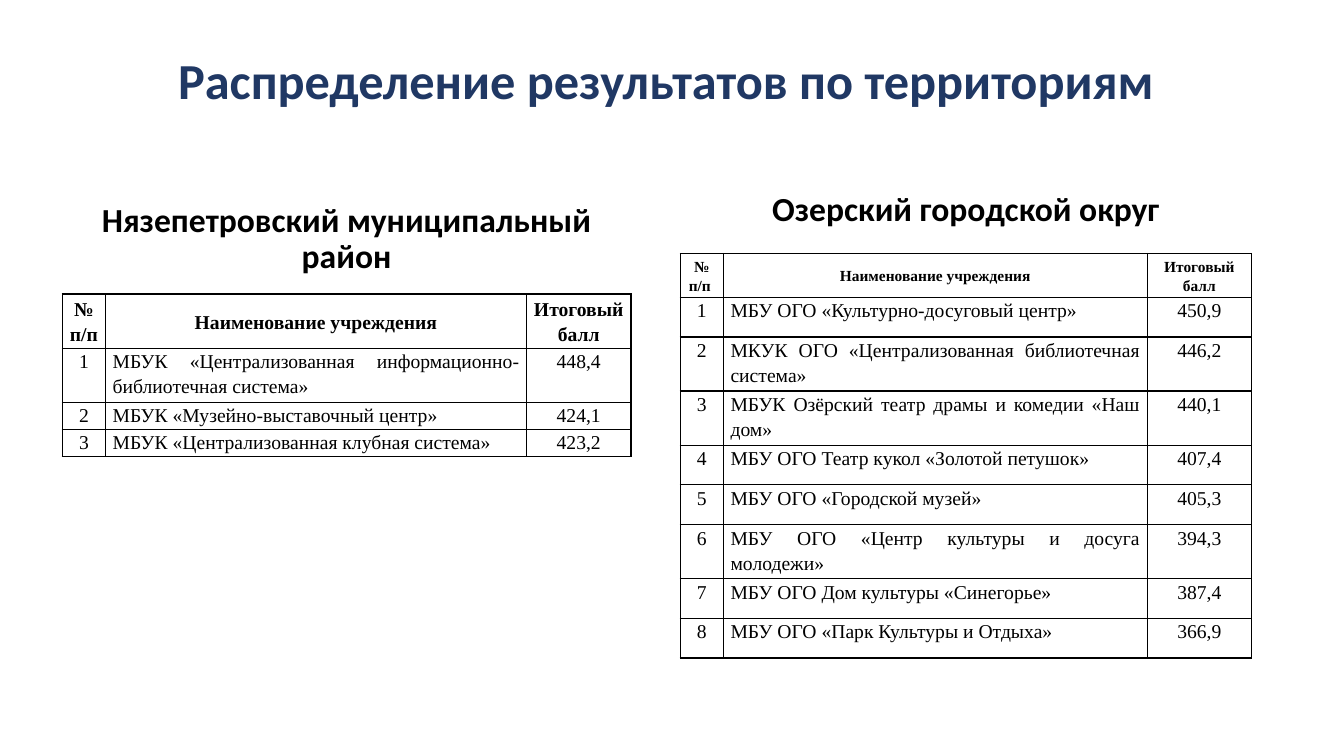
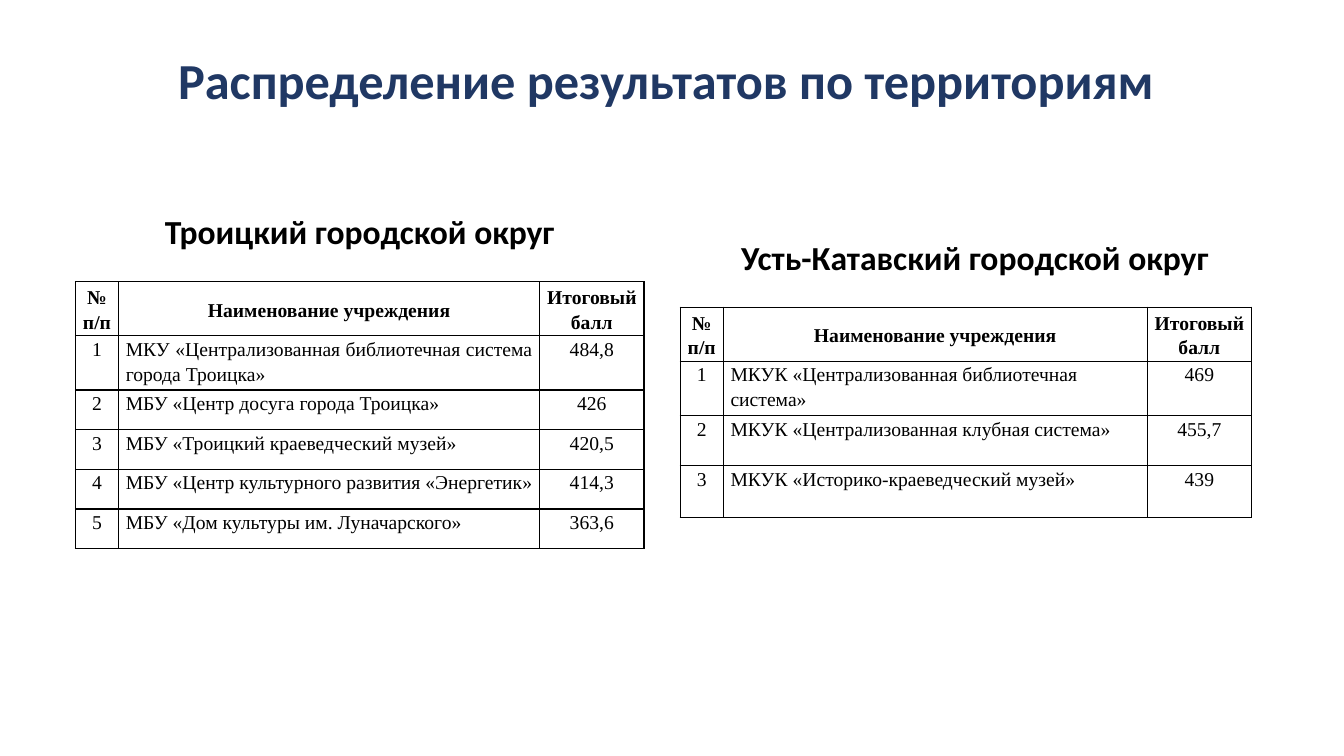
from dataclasses import dataclass

from lxml import etree
from pptx import Presentation
from pptx.dml.color import RGBColor
from pptx.enum.text import MSO_ANCHOR, PP_ALIGN
from pptx.oxml.ns import qn
from pptx.slide import Slide
from pptx.table import _Cell
from pptx.text.text import _Paragraph
from pptx.util import Cm, Pt

CENTER, LEFT, JUST = PP_ALIGN.CENTER, PP_ALIGN.LEFT, PP_ALIGN.JUSTIFY
TOP, MIDDLE, BOTTOM = MSO_ANCHOR.TOP, MSO_ANCHOR.MIDDLE, MSO_ANCHOR.BOTTOM


@dataclass(frozen=True)
class Theme:
    navy: str = "203864"
    black: str = "000000"
    sans: str = "Calibri"
    serif: str = "Times New Roman"
    title: int = 36
    head: int = 24
    body: int = 14
    small: int = 11
    rule: int = 1


@dataclass(frozen=True)
class Box:
    left: float
    top: float
    width: float
    height: float


@dataclass(frozen=True)
class Row:
    name: str
    score: str
    height: float = 1.0


@dataclass(frozen=True)
class Board:
    """A heading with its score table; lengths in centimetres."""
    head: str
    spot: Box
    left: float
    top: float
    mid: float  # width of the name column
    tall: float  # height of the header row
    rows: tuple[Row, ...]
    size: int = 14  # type size of the header row
    align: PP_ALIGN = JUST


THEME = Theme()
TITLE = "Распределение результатов по территориям "
LABELS = ("№ п/п ", "Наименование учреждения", "Итоговый балл")
NUM, SCORE = 1.09, 2.63  # widths of the outer columns
WIDE = 1.26  # height of a row with two lines
SIDE = 0.18  # cell margin
LEFT_MID, RIGHT_MID = 10.61, 10.68
HEAD_H = 2.29

# Content
SLIDES = (
    (
        Board("Нязепетровский муниципальный район", Box(1.57, 4.78, 14.33, HEAD_H),
              1.57, 7.41, LEFT_MID, WIDE, (
                  Row("МБУК «Централизованная информационно-библиотечная система» ", "448,4", WIDE),
                  Row("МБУК «Музейно-выставочный центр» ", "424,1", 0.63),
                  Row("МБУК «Централизованная клубная система» ", "423,2", 0.68),
              )),
        Board("Озерский городской округ", Box(17.14, 3.61, 14.4, HEAD_H),
              17.14, 6.39, RIGHT_MID, 1.1, (
                  Row("МБУ ОГО «Культурно-досуговый центр»", "450,9"),
                  Row("МКУК ОГО «Централизованная библиотечная система»", "446,2", WIDE),
                  Row("МБУК Озёрский театр драмы и комедии «Наш дом»", "440,1", WIDE),
                  Row("МБУ ОГО Театр кукол «Золотой петушок»", "407,4"),
                  Row("МБУ ОГО «Городской музей»", "405,3"),
                  Row("МБУ ОГО «Центр культуры и досуга молодежи»", "394,3", WIDE),
                  Row("МБУ ОГО Дом культуры «Синегорье»", "387,4"),
                  Row("МБУ ОГО «Парк Культуры и Отдыха»", "366,9"),
              ), size=THEME.small),
    ),
    (
        Board("Троицкий городской округ", Box(1.9, 4.17, 14.33, HEAD_H),
              1.9, 7.1, LEFT_MID, 1.3, (
                  Row("МКУ «Централизованная библиотечная система города Троицка» ", "484,8", WIDE),
                  Row("МБУ «Центр досуга города Троицка» ", "426"),
                  Row("МБУ «Троицкий краеведческий музей» ", "420,5"),
                  Row("МБУ «Центр культурного развития «Энергетик» ", "414,3"),
                  Row("МБУ «Дом культуры им. Луначарского» ", "363,6"),
              )),
        Board("Усть-Катавский городской округ", Box(17.37, 4.83, 14.4, HEAD_H),
              17.14, 7.74, RIGHT_MID, WIDE, (
                  Row("МКУК «Централизованная библиотечная система»", "469", WIDE),
                  Row("МКУК «Централизованная клубная система»", "455,7", WIDE),
                  Row("МКУК «Историко-краеведческий музей»", "439", 1.32),
              ), align=LEFT),
    ),
)


# Text
def style(para: _Paragraph, font: str, size: int, color: str, bold: bool,
          align: PP_ALIGN, lines: float) -> None:
    para.alignment = align
    para.line_spacing = lines
    for run in para.runs:
        run.font.name = font
        run.font.size = Pt(size)
        run.font.bold = bold
        run.font.color.rgb = RGBColor.from_string(color)


def add_text(slide: Slide, text: str, box: Box, size: int, color: str,
             anchor: MSO_ANCHOR) -> None:
    shape = slide.shapes.add_textbox(Cm(box.left), Cm(box.top),
                                     Cm(box.width), Cm(box.height))
    frame = shape.text_frame
    frame.word_wrap = True
    frame.vertical_anchor = anchor
    frame.text = text
    style(frame.paragraphs[0], THEME.sans, size, color, True, CENTER, 0.9)


# Tables
def add_rules(cell: _Cell) -> None:
    props = cell._tc.get_or_add_tcPr()
    for edge in ("a:lnL", "a:lnR", "a:lnT", "a:lnB"):
        line = etree.SubElement(props, qn(edge), w=str(Pt(THEME.rule)))
        fill = etree.SubElement(line, qn("a:solidFill"))
        etree.SubElement(fill, qn("a:srgbClr"), val=THEME.black)


def fill_cell(cell: _Cell, text: str, size: int, bold: bool,
              align: PP_ALIGN) -> None:
    add_rules(cell)
    cell.fill.background()
    cell.margin_left = cell.margin_right = Cm(SIDE)
    cell.margin_top = cell.margin_bottom = 0
    cell.vertical_anchor = MIDDLE if bold else TOP
    cell.text_frame.text = text
    style(cell.text_frame.paragraphs[0], THEME.serif, size, THEME.black,
          bold, align, 1.15)


def add_board(slide: Slide, board: Board) -> None:
    add_text(slide, board.head, board.spot, THEME.head, THEME.black, BOTTOM)
    widths = (NUM, board.mid, SCORE)
    heights = (board.tall, *(row.height for row in board.rows))
    table = slide.shapes.add_table(
        len(heights), len(widths), Cm(board.left), Cm(board.top),
        Cm(sum(widths)), Cm(sum(heights))).table
    table.first_row = table.horz_banding = False
    for col, width in zip(table.columns, widths):
        col.width = Cm(width)
    for line, height in zip(table.rows, heights):
        line.height = Cm(height)
    for col, label in enumerate(LABELS):
        fill_cell(table.cell(0, col), label, board.size, True, CENTER)
    for num, row in enumerate(board.rows, 1):
        texts = (str(num), row.name, row.score)
        for col, (text, align) in enumerate(zip(texts, (CENTER, board.align, CENTER))):
            fill_cell(table.cell(num, col), text, THEME.body, False, align)


def main() -> None:
    deck = Presentation()
    deck.slide_width, deck.slide_height = Cm(33.87), Cm(19.05)
    for boards in SLIDES:
        slide = deck.slides.add_slide(deck.slide_layouts[6])
        add_text(slide, TITLE, Box(2.33, 0.66, 29.21, 2.87),
                 THEME.title, THEME.navy, MIDDLE)
        for board in boards:
            add_board(slide, board)
    deck.save("out.pptx")


if __name__ == "__main__":
    main()
